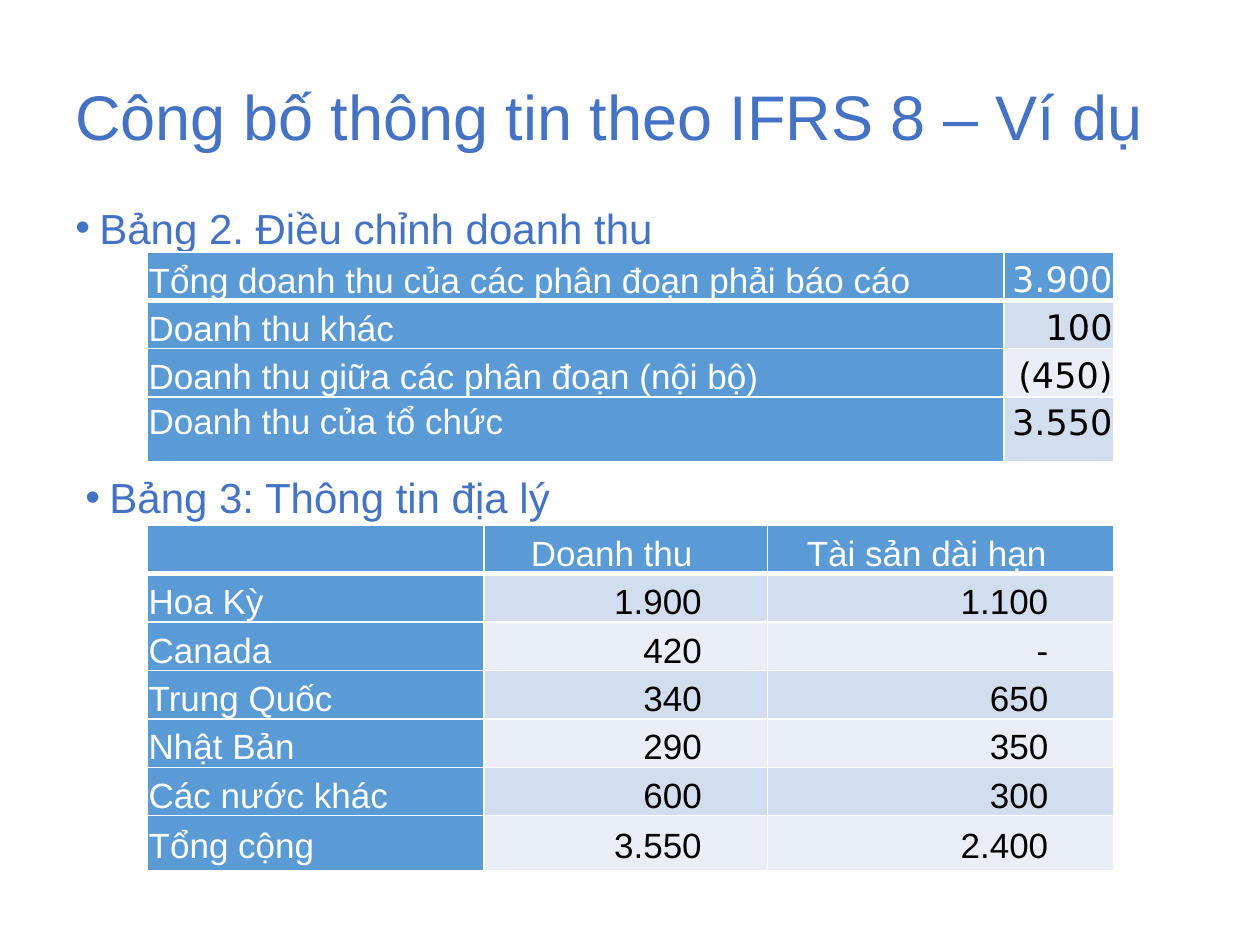
from dataclasses import dataclass

from lxml import etree
from pptx import Presentation
from pptx import util as u
from pptx.dml.color import RGBColor
from pptx.enum import text
from pptx.oxml import ns

WIDE, HIGH = 10, 7.5


@dataclass(frozen=True)
class Theme:
    font: str = "Arial"
    digits: str = "DejaVu Sans"
    ink: str = "4472C4"
    head: str = "5B9BD5"
    bands: tuple = ("D2DEEF", "EAEFF7")
    light: str = "FFFFFF"
    dark: str = "000000"
    title: int = 36
    body: int = 24
    cell: int = 20


THEME = Theme()
ALIGN = text.PP_ALIGN
ANCHOR = text.MSO_ANCHOR


def frame(x, y, w, h):
    """Turn shares of the slide's size into lengths."""
    return [u.Inches(round(n, 2)) for n in (x * WIDE, y * HIGH, w * WIDE, h * HIGH)]


def style(para, size, color, font=THEME.font):
    for run in para.runs:
        run.font.size = u.Pt(size)
        run.font.name = font
        run.font.bold = False
        run.font.color.rgb = RGBColor.from_string(color)


def add_text(slide, box, words, size, spacing, wrap=True):
    body = slide.shapes.add_textbox(*frame(*box)).text_frame
    body.word_wrap = wrap
    body.text = words
    para = body.paragraphs[0]
    para.line_spacing = spacing
    style(para, size, THEME.ink)
    return body


def add_bullet(slide, box, words, wrap=True):
    body = add_text(slide, box, words, THEME.body, 1.14, wrap)
    para = body.paragraphs[0]
    para.space_before = u.Pt(7.5)
    props = para._p.get_or_add_pPr()
    props.set("marL", str(u.Inches(0.19)))
    props.set("indent", str(-u.Inches(0.19)))
    etree.SubElement(props, ns.qn("a:buFont")).set("typeface", THEME.font)
    etree.SubElement(props, ns.qn("a:buChar")).set("char", "•")
    return body


def add_edges(cell, row):
    """White rules, with a thick one below the header row."""
    thick = {(0, "B"), (1, "T")}
    props = cell._tc.get_or_add_tcPr()
    for side in "LRTB":
        line = etree.SubElement(props, ns.qn("a:ln" + side))
        line.set("w", str(u.Pt(3 if (row, side) in thick else 1)))
        fill = etree.SubElement(line, ns.qn("a:solidFill"))
        etree.SubElement(fill, ns.qn("a:srgbClr")).set("val", THEME.light)


def fill_cell(cell, words, row, col, font, pad, head_align):
    head = row == 0 or col == 0
    cell.margin_top = cell.margin_bottom = 0
    cell.margin_left = u.Inches(0.3 if pad and row == 0 and col else 0.01)
    cell.margin_right = u.Inches(pad if pad and col else 0.01)
    add_edges(cell, row)
    cell.fill.solid()
    shade = THEME.head if head else THEME.bands[(row - 1) % 2]
    cell.fill.fore_color.rgb = RGBColor.from_string(shade)
    cell.text_frame.text = words
    para = cell.text_frame.paragraphs[0]
    para.line_spacing = 1.15
    if col == 0:
        para.alignment = ALIGN.JUSTIFY
    else:
        para.alignment = head_align if row == 0 else ALIGN.RIGHT
    style(para, THEME.cell, THEME.light if head else THEME.dark,
          font if col else THEME.font)


def add_grid(slide, box, cols, rows, data, last, font=THEME.font, pad=0,
             head_align=ALIGN.RIGHT):
    shape = slide.shapes.add_table(len(rows), len(cols), *frame(*box))
    grid = shape.table
    for col, wide in zip(grid.columns, cols):
        col.width = u.Inches(wide)
    for row, high in zip(grid.rows, rows):
        row.height = u.Inches(high)
    for r, line in enumerate(data):
        for c, words in enumerate(line):
            cell = grid.cell(r, c)
            fill_cell(cell, words, r, c, font, pad, head_align)
            cell.vertical_anchor = last if r == len(rows) - 1 else ANCHOR.BOTTOM
    shape.height = frame(*box)[3]


def main():
    deck = Presentation()
    deck.slide_width, deck.slide_height = u.Inches(WIDE), u.Inches(HIGH)
    slide = deck.slides.add_slide(deck.slide_layouts[6])

    # Title
    title = add_text(slide, (0.05, 0.053, 0.881, 0.147),
                     "Công bố thông tin theo IFRS 8 – Ví dụ", THEME.title, 0.9)
    title.vertical_anchor = ANCHOR.MIDDLE

    # Revenue adjustments
    add_bullet(slide, (0.05, 0.2, 0.9, 0.705), "Bảng 2. Điều chỉnh doanh thu")
    sales = [
        ("Tổng doanh thu của các phân đoạn phải báo cáo", "3.900"),
        ("Doanh thu khác", "100"),
        ("Doanh thu giữa các phân đoạn (nội bộ)", "(450)"),
        ("Doanh thu của tổ chức", "3.550"),
    ]
    add_grid(slide, (0.117, 0.267, 0.767, 0.211), (6.8, 0.87),
             [0.36] * 3 + [0.51], sales, ANCHOR.TOP, THEME.digits)

    # Figures by country
    places = [
        ("", "Doanh thu", "Tài sản dài hạn"),
        ("Hoa Kỳ", "1.900", "1.100"),
        ("Canada", "420", "-"),
        ("Trung Quốc", "340", "650"),
        ("Nhật Bản", "290", "350"),
        ("Các nước khác", "600", "300"),
        ("Tổng cộng", "3.550", "2.400"),
    ]
    add_grid(slide, (0.117, 0.556, 0.767, 0.34), (2.67, 2.25, 2.75),
             [0.34] + [0.25] * 4 + [0.27, 0.44], places, ANCHOR.MIDDLE,
             pad=0.52, head_align=ALIGN.CENTER)
    label = add_bullet(slide, (0.058, 0.485, 0.405, 0.071),
                       "Bảng 3: Thông tin địa lý", wrap=False)
    label.auto_size = text.MSO_AUTO_SIZE.SHAPE_TO_FIT_TEXT

    deck.save("out.pptx")


if __name__ == "__main__":
    main()
